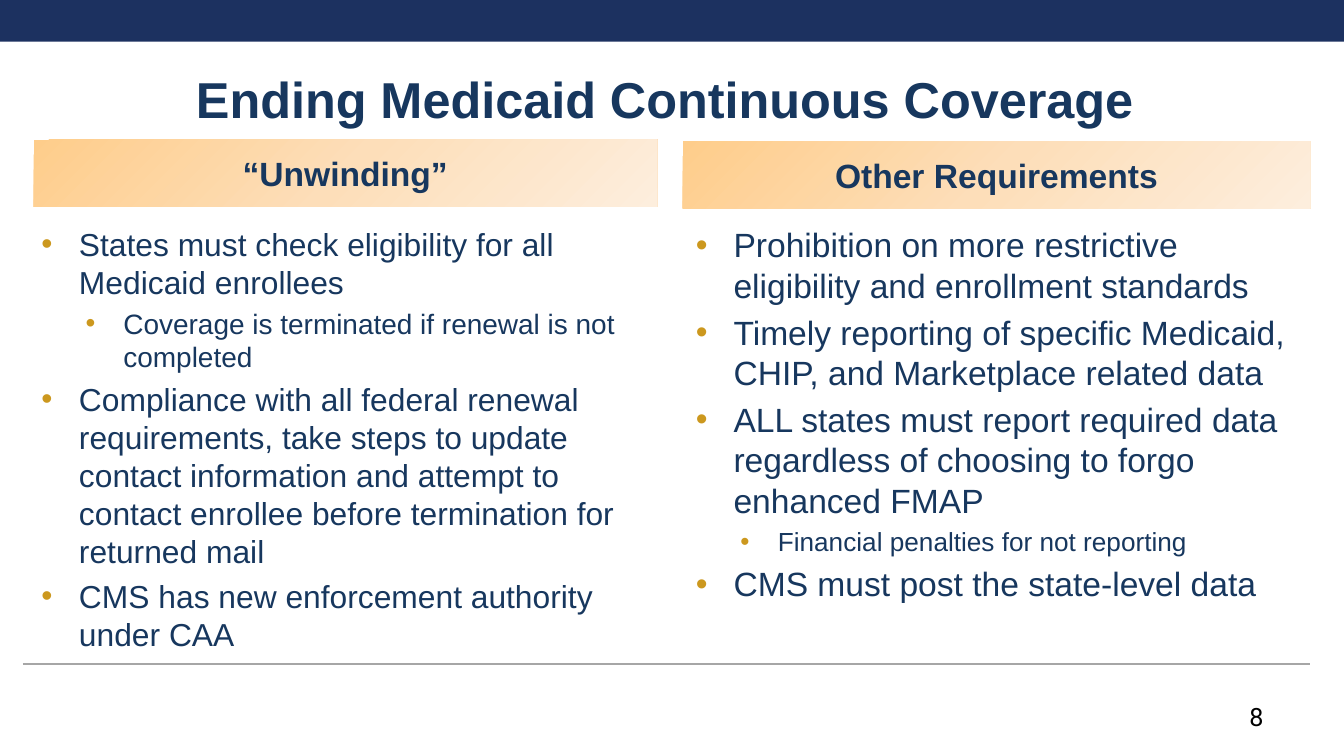
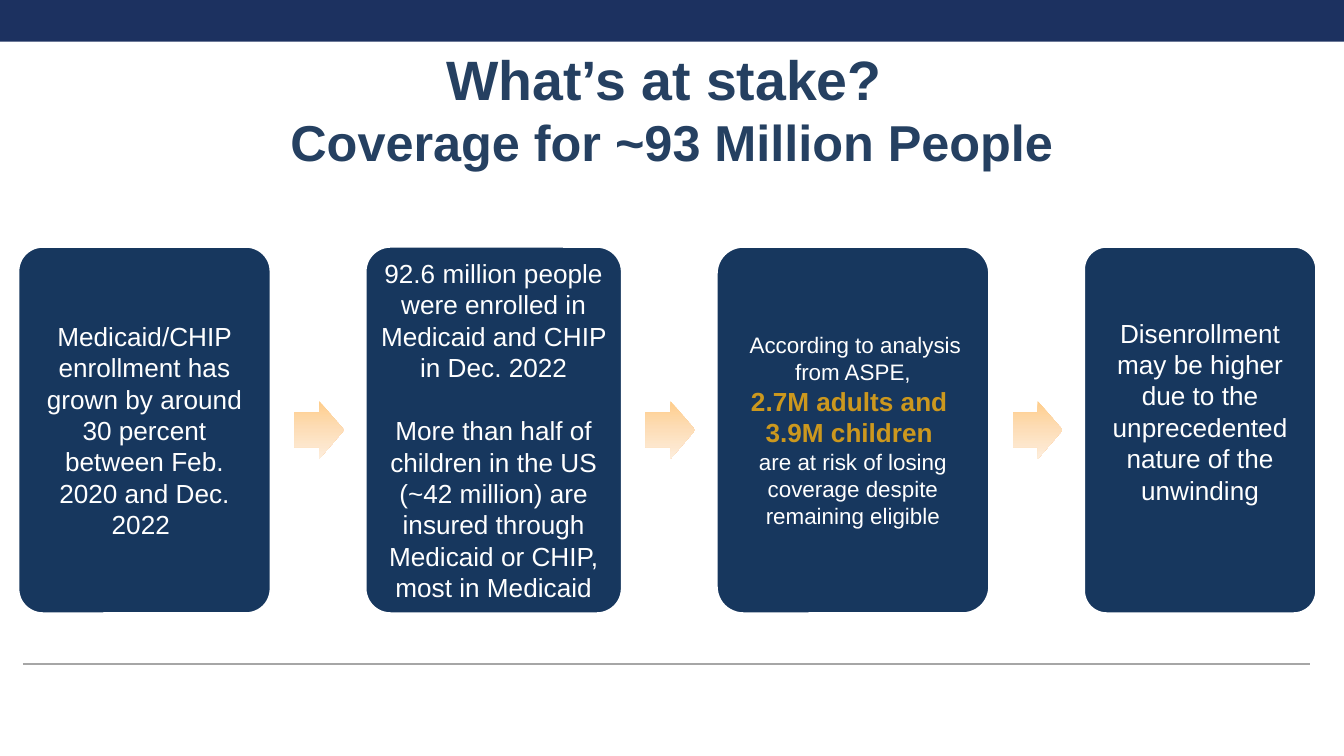
from copy import deepcopy

from lxml import etree
from pptx import Presentation
from pptx.dml.color import RGBColor
from pptx.enum.shapes import MSO_CONNECTOR, MSO_SHAPE
from pptx.enum.text import MSO_ANCHOR, MSO_AUTO_SIZE, PP_ALIGN
from pptx.oxml.ns import qn
from pptx.util import Inches, Pt

RECTANGLE = MSO_SHAPE.RECTANGLE
ROUNDED = MSO_SHAPE.ROUNDED_RECTANGLE
ARROW = MSO_SHAPE.RIGHT_ARROW
STRAIGHT = MSO_CONNECTOR.STRAIGHT
MIDDLE, TOP = MSO_ANCHOR.MIDDLE, MSO_ANCHOR.TOP
CENTER, LEFT, RIGHT = PP_ALIGN.CENTER, PP_ALIGN.LEFT, PP_ALIGN.RIGHT
NO_AUTOFIT = MSO_AUTO_SIZE.NONE

# Shared look
BAND, NAVY, SLATE = "1C3160", "17375E", "254061"
GOLD, GREY, WHITE, BLACK = "CC981E", "A6A6A6", "FFFFFF", "000000"
PEACH = [(0, "FECD8B"), (0.5, "FDDEB9"), (1, "FDEEDD")]
BODY_FONT, NUMBER_FONT = "Arial", "Roboto"

# Content: bullets are (level, size, text), cards are (width, lift, paragraphs)
UNWINDING = [
    (0, 17, "States must check eligibility for all Medicaid enrollees"),
    (1, 15, "Coverage is terminated if renewal is not completed"),
    (0, 17, "Compliance with all federal renewal requirements, take steps to "
            "update contact information and attempt to contact enrollee before "
            "termination for returned mail"),
    (0, 17, "CMS has new enforcement authority under CAA"),
]
REQUIREMENTS = [
    (0, 18, "Prohibition on more restrictive eligibility and enrollment standards"),
    (0, 18, "Timely reporting of specific Medicaid, CHIP, and Marketplace "
            "related data"),
    (0, 18, "ALL states must report required data regardless of choosing to "
            "forgo enhanced FMAP"),
    (1, 14, "Financial penalties for not reporting"),
    (0, 18, "CMS must post the state-level data"),
]
# Card paragraphs are (text, size, colour, bold, points before)
CARDS = [
    (1.89, 0, [("Medicaid/CHIP enrollment has grown by around 30 percent between "
                "Feb. 2020 and Dec. 2022 ", 14, WHITE, False, 0)]),
    (1.92, 0, [("92.6 million people were enrolled in Medicaid and CHIP in "
                "Dec. 2022", 14, WHITE, False, 0),
               ("More than half of children in the US (~42 million) are insured "
                "through Medicaid or CHIP, most in Medicaid",
                14, WHITE, False, 17)]),
    (2.04, 0, [(" According to analysis from ASPE,", 12, WHITE, False, 0),
               ("2.7M adults and ", 14, GOLD, True, 0),
               ("3.9M children ", 14, GOLD, True, 0),
               ("are at risk of losing coverage despite remaining eligible",
                12, WHITE, False, 0)]),
    (1.74, 0.28, [("Disenrollment may be higher due to the unprecedented nature "
                   "of the unwinding", 14, WHITE, False, 0)]),
]


def rgb(value):
    return RGBColor.from_string(value)


def inches(*values):
    return [Inches(value) for value in values]


def add_span(para, text, size, color, bold=False, font=BODY_FONT):
    span = para.add_run()
    span.text = text
    span.font.name = font
    span.font.size = Pt(size)
    span.font.bold = bold
    span.font.color.rgb = rgb(color)


def text_frame(shape, anchor):
    frame = shape.text_frame
    frame.word_wrap = True
    frame.auto_size = NO_AUTOFIT
    frame.vertical_anchor = anchor
    return frame


def next_para(frame, index, align):
    para = frame.add_paragraph() if index else frame.paragraphs[0]
    para.alignment = align
    return para


def add_figure(page, preset, box, fill=None):
    """Plain preset shape without line or shadow."""
    shape = page.shapes.add_shape(preset, *inches(*box))
    shape.shadow.inherit = False
    shape.line.fill.background()
    if fill:
        shape.fill.solid()
        shape.fill.fore_color.rgb = rgb(fill)
    return shape


def peach_gradient(shape, angle):
    """Three-stop gradient, angle in degrees clockwise."""
    fill = shape.fill
    fill.gradient()
    fill.gradient_angle = 360 - angle
    stop_list = shape.element.spPr.find(qn("a:gradFill")).find(qn("a:gsLst"))
    stop_list.insert(1, deepcopy(stop_list[0]))
    for stop, (position, color) in zip(fill.gradient_stops, PEACH):
        stop.position = position
        stop.color.rgb = rgb(color)


def add_bullet(para, level):
    props = para._p.get_or_add_pPr()
    props.set("marL", str(Inches(0.61 if level else 0.28)))
    props.set("indent", str(Inches(-0.28)))
    color = etree.SubElement(props, qn("a:buClr"))
    etree.SubElement(color, qn("a:srgbClr")).set("val", GOLD)
    etree.SubElement(props, qn("a:buFont")).set("typeface", BODY_FONT)
    etree.SubElement(props, qn("a:buChar")).set("char", "•")


def decorate_layout(layout, page):
    """Top band and footer rule, moved from the page to its layout."""
    band = add_figure(page, RECTANGLE, (0, 0, 10, 0.31), BAND)
    rule = page.shapes.add_connector(STRAIGHT, *inches(0.17, 4.94, 9.75, 4.94))
    rule.line.color.rgb = rgb(GREY)
    rule.line.width = Pt(0.75)
    etree.SubElement(rule.element.spPr, qn("a:effectLst"))
    for part in (band, rule):
        layout.shapes.element.append(part.element)


def set_title(page, top, lines, color):
    title = page.shapes.title
    title.left, title.top, title.width, title.height = inches(0.5, top, 9, 0.85)
    para = next_para(text_frame(title, MIDDLE), 0, CENTER)
    for index, (text, size) in enumerate(lines):
        if index:
            para.add_line_break()
        add_span(para, text, size, color, bold=True)


def add_column(page, header_box, header, body_box, bullets):
    """Gradient heading above a bulleted list."""
    body = page.shapes.add_textbox(*inches(*body_box))
    frame = text_frame(body, TOP)
    for index, (level, size, text) in enumerate(bullets):
        para = next_para(frame, index, LEFT)
        para.level = level
        if index:
            para.space_before = Pt(size * 0.2)
        add_bullet(para, level)
        add_span(para, text, size, NAVY)

    heading = add_figure(page, RECTANGLE, header_box)
    peach_gradient(heading, 45)
    para = next_para(text_frame(heading, MIDDLE), 0, CENTER)
    add_span(para, header, 18, NAVY, bold=True)


def add_page_number(page, number):
    box = page.shapes.add_textbox(*inches(7.17, 5.17, 2.33, 0.3))
    para = next_para(text_frame(box, TOP), 0, RIGHT)
    add_span(para, number, 13.5, BLACK, font=NUMBER_FONT)


def add_card(page, box, lift, paragraphs):
    card = add_figure(page, ROUNDED, box, NAVY)
    card.adjustments[0] = 0.1
    card.line.color.rgb = rgb(WHITE)
    card.line.width = Pt(2)
    frame = text_frame(card, MIDDLE)
    frame.margin_left = frame.margin_right = Inches(0.06)
    frame.margin_top = Inches(0.06)
    frame.margin_bottom = Inches(0.06 + lift)
    for index, (text, size, color, bold, before) in enumerate(paragraphs):
        para = next_para(frame, index, CENTER)
        if before:
            para.space_before = Pt(before)
        add_span(para, text, size, color, bold)


def add_card_flow(page, left, top, width, height):
    """Cards spread over the width with an arrow in each gap."""
    gap = (width - sum(card[0] for card in CARDS)) / (len(CARDS) - 1)
    arrow_width, arrow_height = 0.37, 0.43
    arrow_top = top + (height - arrow_height) / 2
    for index, (card_width, lift, paragraphs) in enumerate(CARDS):
        if index:
            arrow = add_figure(page, ARROW, (left - gap + 0.17, arrow_top,
                                             arrow_width, arrow_height))
            arrow.adjustments[0] = 0.6
            arrow.adjustments[1] = 0.5
            peach_gradient(arrow, 90)
        add_card(page, (left, top, card_width, height), lift, paragraphs)
        left += card_width + gap


def build_coverage_page(page):
    set_title(page, 0.31, [("Ending Medicaid Continuous Coverage ", 27)], NAVY)
    add_column(page, (0.25, 1.04, 4.64, 0.5), "“Unwinding”",
               (0.21, 1.62, 4.67, 3.38), UNWINDING)
    add_column(page, (5.08, 1.05, 4.67, 0.5), "Other Requirements",
               (5.08, 1.62, 4.67, 3.38), REQUIREMENTS)
    add_page_number(page, "8")


def build_stakes_page(page):
    set_title(page, 0.38, [("What’s at stake? ", 29.7),
                           ("Coverage for ~93 Million People", 27)], SLATE)
    add_card_flow(page, 0.13, 1.83, 9.67, 2.74)


def main():
    deck = Presentation()
    # Widescreen, 16 to 9
    deck.slide_width = Inches(10)
    deck.slide_height = Inches(10) * 9 // 16
    layout = deck.slide_layouts.get_by_name("Title Only")
    coverage = deck.slides.add_slide(layout)
    decorate_layout(layout, coverage)
    build_coverage_page(coverage)
    build_stakes_page(deck.slides.add_slide(layout))
    deck.save("out.pptx")


if __name__ == "__main__":
    main()
